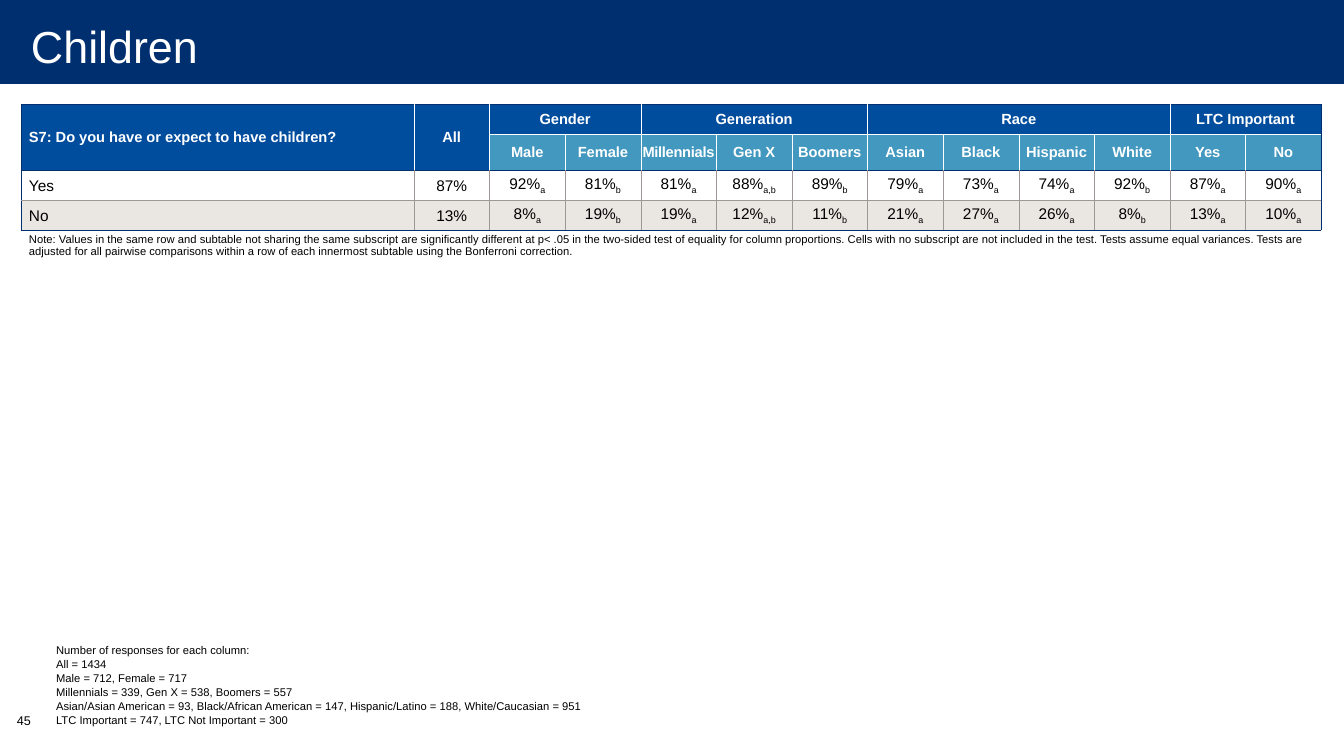
import pptx
import pptx.dml.color
import pptx.enum.shapes
import pptx.enum.text
import pptx.oxml
import pptx.oxml.ns
import pptx.util

ALIGN = pptx.enum.text.PP_ALIGN
ANCHOR = pptx.enum.text.MSO_ANCHOR
COLORS = {"navy": "002F70", "blue": "004C9D", "sky": "4298BE", "sand": "EAE6E2",
          "grey": "9D9795", "white": "FFFFFF", "black": "000000"}

GROUPS = [("Gender", ["Male", "Female"]),
          ("Generation", ["Millennials", "Gen X", "Boomers"]),
          ("Race", ["Asian", "Black", "Hispanic", "White"]),
          ("LTC Important", ["Yes", "No"])]
ROWS = [("Yes", "87% 92%a 81%b 81%a 88%a,b 89%b 79%a 73%a 74%a 92%b 87%a 90%a"),
        ("No", "13% 8%a 19%b 19%a 12%a,b 11%b 21%a 27%a 26%a 8%b 13%a 10%a")]
NOTE = ("Note: Values in the same row and subtable not sharing the same subscript are "
        "significantly different at p< .05 in the two-sided test of equality for column "
        "proportions. Cells with no subscript are not included in the test. Tests assume "
        "equal variances. Tests are adjusted for all pairwise comparisons within a row of "
        "each innermost subtable using the Bonferroni correction.")
COUNTS = """Number of responses for each column:
All = 1434
Male = 712, Female = 717
Millennials = 339, Gen X = 538, Boomers = 557
Asian/Asian American = 93, Black/African American = 147, Hispanic/Latino = 188, White/Caucasian = 951
LTC Important = 747, LTC Not Important = 300"""


def px(count):
    return pptx.util.Emu(round(count * 914400 / 100.8))


def rgb(name):
    return pptx.dml.color.RGBColor.from_string(COLORS[name])


class Deck:
    def __init__(self, wide, high):
        self.face = "Arial"
        self.file = pptx.Presentation()
        self.file.slide_width, self.file.slide_height = px(wide), px(high)
        self.slide = self.file.slides.add_slide(self.file.slide_layouts[1])

    def font(self, para, size, color="black", bold=False):
        font = para.font
        font.name, font.size, font.bold = self.face, pptx.util.Pt(size), bold
        font.color.rgb = rgb(color)

    def place(self, shape, left, top, wide, high):
        shape.left, shape.top, shape.width, shape.height = map(px, (left, top, wide, high))

    def band(self, left, top, wide, high, color):
        kind = pptx.enum.shapes.MSO_SHAPE.RECTANGLE
        shape = self.slide.shapes.add_shape(kind, *map(px, (left, top, wide, high)))
        shape.shadow.inherit = False
        shape.fill.solid()
        shape.fill.fore_color.rgb = rgb(color)
        shape.line.fill.background()
        # Behind the placeholders
        tree = self.slide.shapes._spTree
        tree.insert(2, shape._element)

    def title(self, text, box):
        shape = self.slide.shapes.title
        self.place(shape, *box)
        frame = shape.text_frame
        frame.word_wrap = True
        frame.auto_size = pptx.enum.text.MSO_AUTO_SIZE.NONE
        frame.vertical_anchor = ANCHOR.MIDDLE
        frame.margin_left, frame.margin_right = px(30), px(20)
        frame.margin_top = frame.margin_bottom = 0
        para = frame.paragraphs[0]
        para.text, para.alignment = text, ALIGN.LEFT
        self.font(para, 32, "white")

    def body(self, text, box):
        shape = self.slide.placeholders[1]
        self.place(shape, *box)
        frame = shape.text_frame
        frame.auto_size = pptx.enum.text.MSO_AUTO_SIZE.NONE
        frame.vertical_anchor = ANCHOR.BOTTOM
        para = frame.paragraphs[0]
        para.text, para.line_spacing = text, 1.05
        para.space_before = pptx.util.Pt(0)
        props = para._p.get_or_add_pPr()
        props.set("marL", "0")
        props.set("indent", "0")
        pptx.oxml.ns.qn("a:buNone")
        props.append(pptx.oxml.parse_xml(
            f'<a:buNone {pptx.oxml.ns.nsdecls("a")}/>'))
        self.font(para, 8)

    def label(self, text, box, size):
        frame = self.slide.shapes.add_textbox(*map(px, box)).text_frame
        frame.word_wrap = True
        frame.paragraphs[0].text = text
        self.font(frame.paragraphs[0], size)

    def grid(self, left, top, cols, rows):
        shape = self.slide.shapes.add_table(
            len(rows), len(cols), *map(px, (left, top, sum(cols), sum(rows))))
        table = shape.table
        table.first_row = table.horz_banding = False
        for col, wide in zip(table.columns, cols):
            col.width = px(wide)
        for row, high in zip(table.rows, rows):
            row.height = px(high)
        for cell in table.iter_cells():
            self.inset(cell, 0, 0, 0, 0)
            self.font(cell.text_frame.paragraphs[0], 8)
        return table

    def inset(self, cell, *sides):
        (cell.margin_left, cell.margin_top,
         cell.margin_right, cell.margin_bottom) = map(px, sides)

    def edges(self, cell, colors):
        props = cell._tc.get_or_add_tcPr()
        for side, color in zip("LRTB", colors):
            fill = (f'<a:solidFill><a:srgbClr val="{COLORS[color]}"/></a:solidFill>'
                    if color else "<a:noFill/>")
            props.append(pptx.oxml.parse_xml(
                f'<a:ln{side} {pptx.oxml.ns.nsdecls("a")} w="3175">{fill}</a:ln{side}>'))

    def cell(self, cell, text, size, color, fill, edges, bold=False, sub="", mid=True):
        cell.vertical_anchor = ANCHOR.MIDDLE
        self.edges(cell, edges)
        if fill:
            cell.fill.solid()
            cell.fill.fore_color.rgb = rgb(fill)
        else:
            cell.fill.background()
        para = cell.text_frame.paragraphs[0]
        para.alignment = ALIGN.CENTER if mid else ALIGN.LEFT
        para.add_run().text = text
        if sub:
            run = para.add_run()
            run.text = sub
            run.font._element.set("baseline", "-25000")
        self.font(para, size, color, bold)
        return para


def main():
    deck = Deck(1344, 756)

    # Heading
    deck.band(0, -3, 1344, 87, "navy")
    deck.title("Children", (1, -3, 1344, 98))

    # Table frame
    cols = [393] + [75.6] * 12
    table = deck.grid(21, 104, cols, [30, 36, 30, 30, 30])
    levels = ["navy", "white", "navy", "grey", "navy", None]

    def rim(row, col, down=1, over=1):
        inner = "white" if row < 2 else "grey"
        return ("navy" if col == 0 else inner,
                "navy" if col + over == len(cols) else inner,
                levels[row], levels[row + down])

    def head(row, col, text, fill="blue", down=1, over=1, mid=True):
        cell = table.cell(row, col)
        if down * over > 1:
            cell.merge(table.cell(row + down - 1, col + over - 1))
        return deck.cell(cell, text, 10.5, "white", fill, rim(row, col, down, over),
                         bold=True, mid=mid)

    # Table heads
    head(0, 0, "S7: Do you have or expect to have children?", down=2, mid=False)
    deck.inset(table.cell(0, 0), 8, 10, 5, 10)
    head(0, 1, "All", down=2)
    col = 2
    for group, names in GROUPS:
        head(0, col, group, over=len(names))
        for name in names:
            para = head(1, col, name, "sky")
            if name == "Millennials":
                para.runs[0].font._element.set("spc", "-20")
            col += 1

    # Table values
    for row, (name, values) in enumerate(ROWS, 2):
        fill = "sand" if row == 3 else "white"
        for col, value in enumerate([name] + values.split()):
            main_text, mark, sub = value.partition("%")
            cell = table.cell(row, col)
            deck.inset(cell, 1 if col else 8, 1, 1, 0)
            deck.cell(cell, main_text + mark, 11, "black", fill, rim(row, col),
                      sub=sub, mid=col > 0)

    # Table note
    note = table.cell(4, 0)
    note.merge(table.cell(4, len(cols) - 1))
    deck.inset(note, 8, 1, 1, 0)
    para = deck.cell(note, NOTE, 8, "black", None, (None, None, "navy", None), mid=False)
    para.line_spacing = 0.95

    # Footer
    deck.body(COUNTS, (46, 642, 590, 90))
    deck.label("45", (7, 708, 49, 40), 9)

    deck.file.save("out.pptx")


if __name__ == "__main__":
    main()
